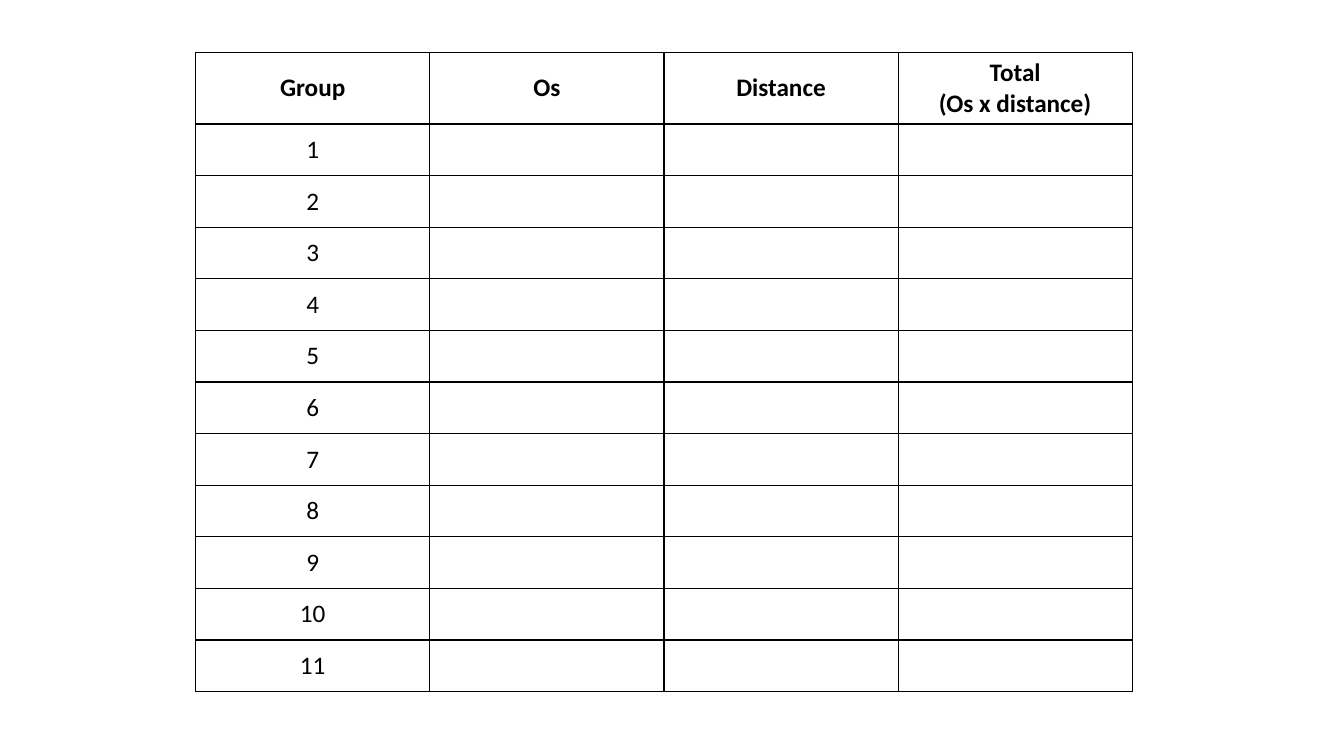
from pptx import Presentation
from pptx import util as u
from pptx.dml.color import RGBColor
from pptx.enum import text
from pptx.oxml import parse_xml
from pptx.oxml.ns import nsdecls

PX = 9144  # EMU per px, 100 px to the inch
BLACK = RGBColor(0x00, 0x00, 0x00)
WHITE = RGBColor(0xFF, 0xFF, 0xFF)
FONT = "Calibri"

HEADERS = ["Group", "Os", "Distance", "Total\n(Os x distance)"]
GROUPS = 11
LEFT, TOP, WIDTH, HEIGHT = 194, 52, 929, 634
HEADER_HEIGHT = 71


def px(n):
    return u.Emu(round(n * PX))


def set_text(tf, content, size=18, bold=False, color=BLACK,
             align=text.PP_ALIGN.CENTER):
    for i, line in enumerate(content.split("\n")):
        p = tf.paragraphs[0] if i == 0 else tf.add_paragraph()
        p.alignment = align
        r = p.add_run()
        r.text = line
        r.font.name = FONT
        r.font.size = u.Pt(size)
        r.font.bold = bold
        r.font.color.rgb = color


def set_borders(cell, color=BLACK, width=1):
    tc_pr = cell._tc.get_or_add_tcPr()
    # Border lines must come before the fill
    for i, side in enumerate(("lnL", "lnR", "lnT", "lnB")):
        tc_pr.insert(i, parse_xml(
            f'<a:{side} {nsdecls("a")} w="{u.Pt(width)}"><a:solidFill>'
            f'<a:srgbClr val="{color}"/></a:solidFill></a:{side}>'))


def add_grid(s, rows, left, top, width, height, header_height):
    frame = s.shapes.add_table(len(rows), len(rows[0]), px(left), px(top),
                               px(width), px(height))
    table = frame.table
    table.horz_banding = False
    # Equal columns, and equal rows below the header
    for col in table.columns:
        col.width = px(width / len(rows[0]))
    row_height = (height - header_height) / (len(rows) - 1)
    for i, values in enumerate(rows):
        table.rows[i].height = px(row_height if i else header_height)
        for j, value in enumerate(values):
            cell = table.cell(i, j)
            cell.fill.solid()
            cell.fill.fore_color.rgb = WHITE
            cell.vertical_anchor = text.MSO_ANCHOR.MIDDLE
            set_borders(cell)
            if value:
                set_text(cell.text_frame, value, bold=i == 0)


def main():
    prs = Presentation()
    prs.slide_width, prs.slide_height = u.Inches(13.33), u.Inches(7.5)
    s = prs.slides.add_slide(prs.slide_layouts[6])

    # Score sheet: one row per group, with blanks to fill in
    blanks = [""] * (len(HEADERS) - 1)
    rows = [HEADERS] + [[str(n), *blanks] for n in range(1, GROUPS + 1)]
    add_grid(s, rows, LEFT, TOP, WIDTH, HEIGHT, HEADER_HEIGHT)

    prs.save("out.pptx")


if __name__ == "__main__":
    main()
